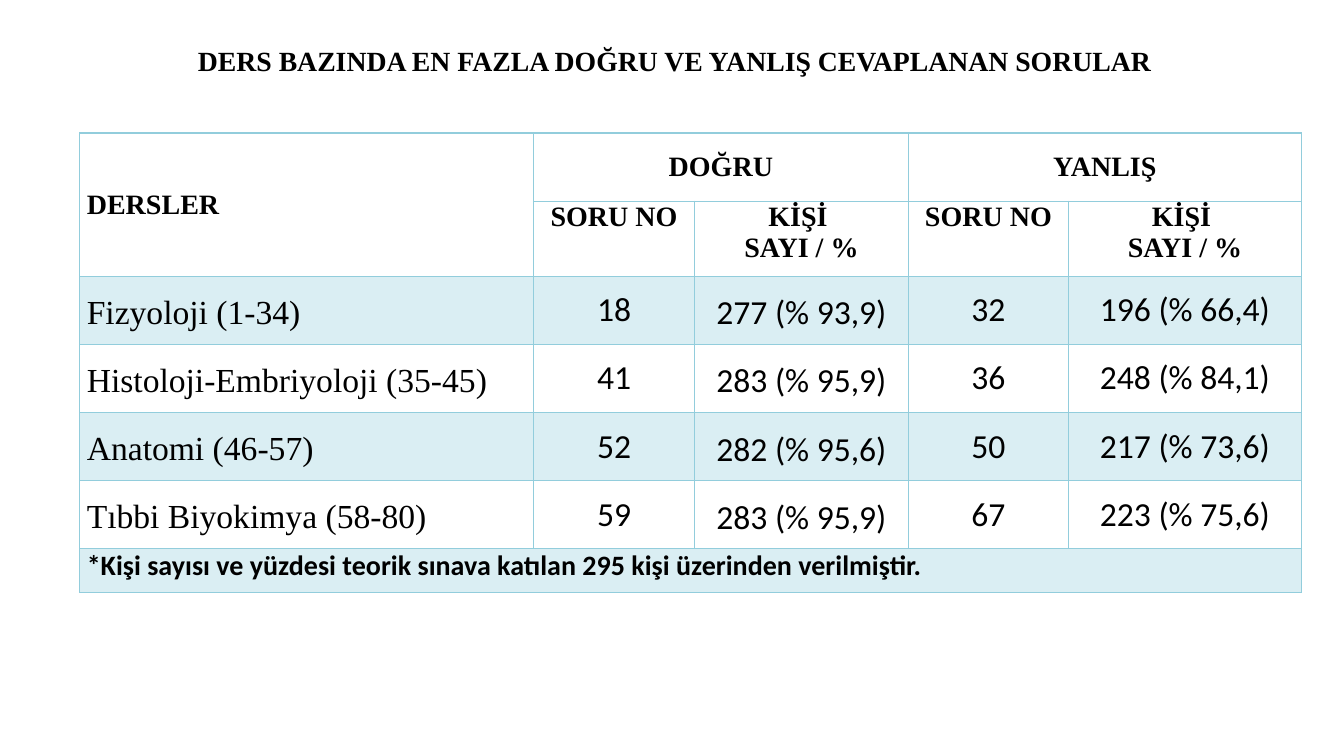
from lxml import etree
from pptx import Presentation
from pptx import util as u
from pptx.dml.color import RGBColor
from pptx.enum import text
from pptx.oxml.ns import qn

SERIF, SANS = "Times New Roman", "Calibri"
BLACK, BAND, BORDER = "000000", "DAEEF3", "92CDDC"
LEFT, CENTER = text.PP_ALIGN.LEFT, text.PP_ALIGN.CENTER
TOP, MIDDLE = text.MSO_ANCHOR.TOP, text.MSO_ANCHOR.MIDDLE
COLUMN_WIDTHS = [324, 115.2, 152.6, 114.5, 166.3]
ROW_HEIGHTS = [48.7, 53.6, 48.7, 48.7, 48.7, 48.7, 31]
LESSONS = [
    ("Fizyoloji (1-34)", "18", "277 (% 93,9)", "32", "196 (% 66,4)"),
    ("Histoloji-Embriyoloji (35-45)", "41", "283 (% 95,9)", "36", "248 (% 84,1)"),
    ("Anatomi (46-57)", "52", "282 (% 95,6)", "50", "217 (% 73,6)"),
    ("Tıbbi Biyokimya (58-80)", "59", "283 (% 95,9)", "67", "223 (% 75,6)"),
]
NOTE = "*Kişi sayısı ve yüzdesi teorik sınava katılan 295 kişi üzerinden verilmiştir."


def color(value):
    """Turn a hex string into a colour."""
    return RGBColor.from_string(value)


def write(frame, words, size, font, bold, align, spacing=1.0, after=0):
    """Put words into a text frame and format every paragraph."""
    frame.text = words
    for paragraph in frame.paragraphs:
        paragraph.alignment = align
        paragraph.line_spacing = spacing
        paragraph.space_after = u.Pt(after)
        for run in paragraph.runs:
            run.font.size = u.Pt(size)
            run.font.name = font
            run.font.bold = bold
            run.font.color.rgb = color(BLACK)


def add_title(slide, words):
    """Add the centred slide heading."""
    box = slide.shapes.add_textbox(u.Pt(66.2), u.Pt(27.5), u.Pt(836), u.Pt(34))
    frame = box.text_frame
    frame.word_wrap = True
    frame.vertical_anchor = MIDDLE
    write(frame, words, 19.8, SERIF, True, CENTER, 0.9)


def style_cell(cell, fill):
    """Give a cell its margins, borders and fill."""
    cell.margin_left = cell.margin_right = u.Pt(5)
    cell.margin_top = cell.margin_bottom = 0
    properties = cell._tc.get_or_add_tcPr()
    for side in ("a:lnL", "a:lnR", "a:lnT", "a:lnB"):
        line = etree.SubElement(properties, qn(side), w=str(u.Pt(1)))
        solid = etree.SubElement(line, qn("a:solidFill"))
        etree.SubElement(solid, qn("a:srgbClr"), val=BORDER)
    if fill:
        cell.fill.solid()
        cell.fill.fore_color.rgb = color(fill)
    else:
        cell.fill.background()


def add_grid(slide):
    """Add the bordered table with alternate rows shaded."""
    grid = slide.shapes.add_table(
        len(ROW_HEIGHTS), len(COLUMN_WIDTHS), u.Pt(57), u.Pt(95),
        u.Pt(sum(COLUMN_WIDTHS)), u.Pt(sum(ROW_HEIGHTS))).table
    for column, width in zip(grid.columns, COLUMN_WIDTHS):
        column.width = u.Pt(width)
    for index, (row, height) in enumerate(zip(grid.rows, ROW_HEIGHTS)):
        row.height = u.Pt(height)
        for cell in row.cells:
            style_cell(cell, BAND if index >= 2 and index % 2 == 0 else None)
    return grid


def merge(grid, first, last):
    """Merge the cells between two grid positions."""
    grid.cell(*first).merge(grid.cell(*last))


def fill_header(grid):
    """Write the two header rows."""
    merge(grid, (0, 0), (1, 0))
    lessons = grid.cell(0, 0)
    lessons.vertical_anchor = MIDDLE
    write(lessons.text_frame, "DERSLER", 20, SERIF, True, LEFT)
    for column, answer in ((1, "DOĞRU"), (3, "YANLIŞ")):
        merge(grid, (0, column), (0, column + 1))
        for row, col, words, anchor in (
                (0, column, answer, MIDDLE),
                (1, column, "SORU NO", TOP),
                (1, column + 1, "KİŞİ \nSAYI / %", TOP)):
            cell = grid.cell(row, col)
            cell.vertical_anchor = anchor
            write(cell.text_frame, words, 20, SERIF, True, CENTER)


def fill_lessons(grid):
    """Write one row for each lesson."""
    for row, lesson in enumerate(LESSONS, start=2):
        for column, words in enumerate(lesson):
            cell = grid.cell(row, column)
            cell.vertical_anchor = MIDDLE
            if column == 0:
                write(cell.text_frame, words, 24, SERIF, False, LEFT, 1.15, 10)
            else:
                spacing = 1.15 if column == 2 else 1.0
                write(cell.text_frame, words, 24, SANS, False, CENTER, spacing)


def fill_note(grid):
    """Write the note across the last row."""
    last = len(ROW_HEIGHTS) - 1
    merge(grid, (last, 0), (last, len(COLUMN_WIDTHS) - 1))
    write(grid.cell(last, 0).text_frame, NOTE, 20, SANS, True, LEFT)


def main():
    """Build and save the slide."""
    deck = Presentation()
    deck.slide_width, deck.slide_height = u.Pt(960), u.Pt(540)
    slide = deck.slides.add_slide(deck.slide_layouts[6])
    add_title(slide, "DERS BAZINDA EN FAZLA DOĞRU VE YANLIŞ CEVAPLANAN SORULAR ")
    grid = add_grid(slide)
    fill_header(grid)
    fill_lessons(grid)
    fill_note(grid)
    deck.save("out.pptx")


if __name__ == "__main__":
    main()
